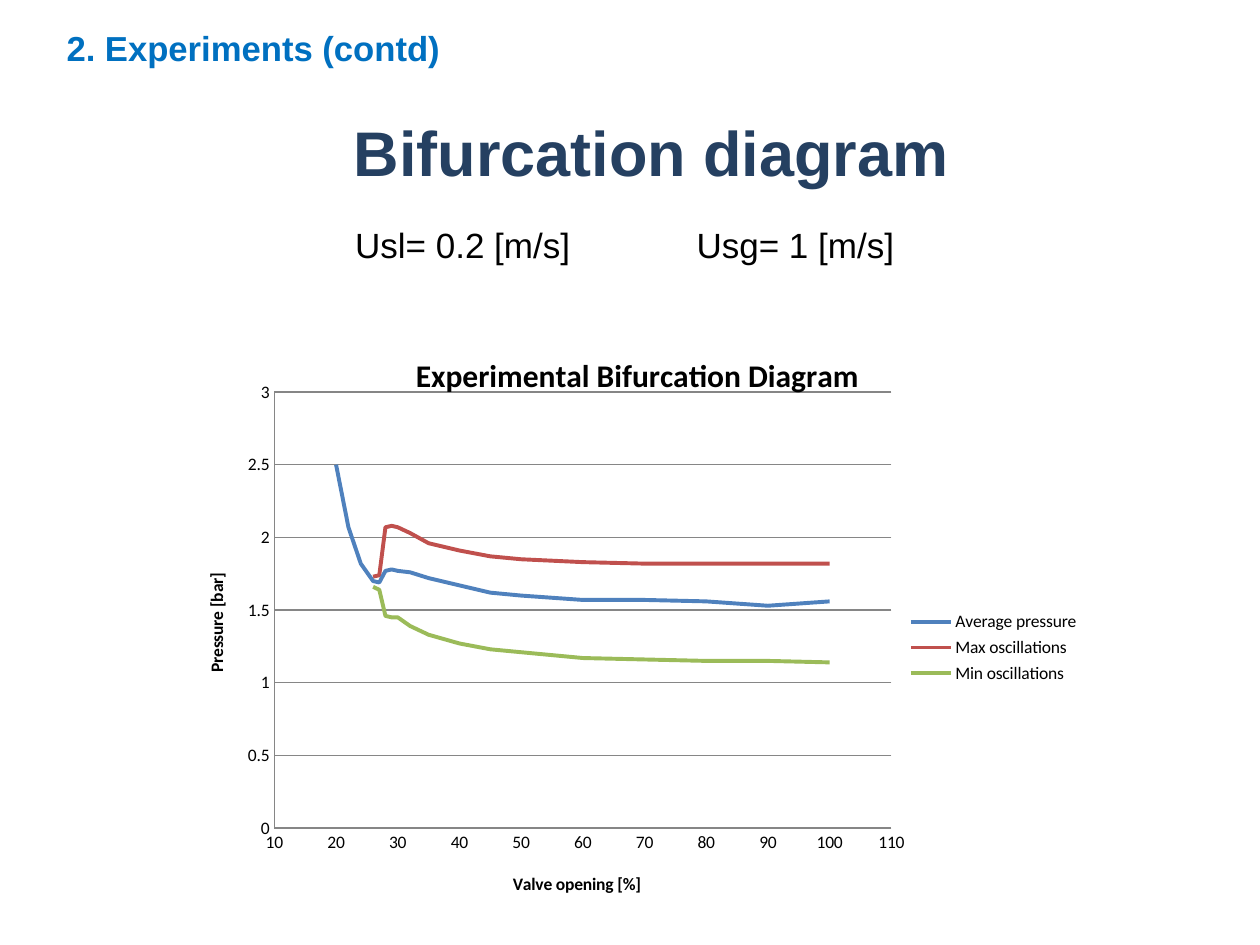
from typing import NamedTuple

from lxml.etree import SubElement
from pptx import Presentation
from pptx.chart.data import XyChartData
from pptx.dml.color import RGBColor
from pptx.enum.chart import XL_CHART_TYPE as Kind, XL_LEGEND_POSITION as Spot
from pptx.enum.chart import XL_TICK_MARK as Tick
from pptx.enum.text import MSO_ANCHOR as Anchor, PP_ALIGN as Align
from pptx.oxml.ns import qn
from pptx.util import Inches, Pt


class Curve(NamedTuple):
    name: str
    color: str
    xs: list[int]
    ys: list[float]


SWING = [26, 27, 28, 29, 30, 32, 35, 40, 45, 50, 60, 70, 80, 90, 100]
CURVES = [
    Curve("Average pressure", "4F81BD", [20, 22, 24] + SWING,
          [2.5, 2.07, 1.82, 1.7, 1.69, 1.77, 1.78, 1.77, 1.76, 1.72,
           1.67, 1.62, 1.6, 1.57, 1.57, 1.56, 1.53, 1.56]),
    Curve("Max oscillations", "C0504D", SWING,
          [1.73, 1.74, 2.07, 2.08, 2.07, 2.03, 1.96, 1.91,
           1.87, 1.85, 1.83, 1.82, 1.82, 1.82, 1.82]),
    Curve("Min oscillations", "9BBB59", SWING,
          [1.66, 1.64, 1.46, 1.45, 1.45, 1.39, 1.33, 1.27,
           1.23, 1.21, 1.17, 1.16, 1.15, 1.15, 1.14]),
]


def paint(obj, color: str) -> None:
    """Set the colour of a font or the solid fill of a line."""
    if hasattr(obj, "fill") and not hasattr(obj, "bold"):
        obj.fill.solid()
        obj = obj.fill.fore_color
    else:
        obj = obj.color
    obj.rgb = RGBColor.from_string(color)


def style(font, size: float, color: str = "000000", bold: bool = False,
          face: str = "Calibri") -> None:
    font.name, font.size, font.bold = face, Pt(size), bold
    paint(font, color)


def write(slide, text: str, left: float, top: float, width: float,
          height: float, size: float, color: str = "000000",
          bold: bool = False, align=Align.LEFT) -> None:
    box = slide.shapes.add_textbox(*map(Inches, (left, top, width, height)))
    frame = box.text_frame
    frame.word_wrap = True
    frame.vertical_anchor = Anchor.MIDDLE
    para = frame.paragraphs[0]
    para.alignment = align
    run = para.add_run()
    run.text = text
    style(run.font, size, color, bold, "Arial")


def place(elem, after: str | None, inner: bool = False, **spots: float) -> None:
    """Give a chart part a fixed place, as fractions of the chart."""
    for old in elem.findall(qn("c:layout")):
        elem.remove(old)
    node = SubElement(elem, qn("c:layout"))
    elem.insert(elem.index(elem.find(qn(after))) + 1 if after else 0, node)
    man = SubElement(node, qn("c:manualLayout"))
    if inner:
        SubElement(man, qn("c:layoutTarget"), val="inner")
    for key in ("x", "y"):
        SubElement(man, qn(f"c:{key}Mode"), val="edge")
    for key, val in spots.items():
        SubElement(man, qn(f"c:{key}"), val=str(val))


def label(title, text: str, size: float, x: float, y: float) -> None:
    frame = title.text_frame
    frame.text = text
    style(frame.paragraphs[0].runs[0].font, size, bold=True)
    place(title._element, "c:tx", x=x, y=y)


def scale(axis, low: float, high: float, step: float) -> None:
    axis.minimum_scale, axis.maximum_scale = low, high
    axis.major_unit = step
    axis.major_tick_mark = axis.minor_tick_mark = Tick.NONE
    axis.tick_labels.number_format = "General"
    axis.tick_labels.number_format_is_linked = False
    style(axis.tick_labels.font, 10)
    rule(axis.format.line)


def rule(line) -> None:
    paint(line, "868686")
    line.width = Pt(0.75)


def plot(slide) -> None:
    data = XyChartData()
    for curve in CURVES:
        row = data.add_series(curve.name)
        for x, y in zip(curve.xs, curve.ys):
            row.add_data_point(x, y)
    spot = map(Inches, (1.46, 2.57, 7.18, 4.76))
    chart = slide.shapes.add_chart(
        Kind.XY_SCATTER_SMOOTH_NO_MARKERS, *spot, data).chart
    style(chart.font, 10)
    chart.plots[0].vary_by_categories = False
    for row, curve in zip(chart.plots[0].series, CURVES):
        row.smooth = True
        paint(row.format.line, curve.color)
        row.format.line.width = Pt(2.25)

    across, up = chart.category_axis, chart.value_axis
    scale(across, 10, 110, 10)
    scale(up, 0, 3, 0.5)
    across.has_major_gridlines = False
    up.has_major_gridlines = True
    rule(up.major_gridlines.format.line)

    label(chart.chart_title, "Experimental Bifurcation Diagram", 18, 0.25, 0.04)
    label(across.axis_title, "Valve opening [%]", 10, 0.36, 0.91)
    label(up.axis_title, "Pressure [bar]", 10, 0.02, 0.41)
    for body in up.axis_title._element.iter(qn("a:bodyPr")):
        body.set("rot", "-5400000")
        body.set("vert", "horz")

    chart.has_legend = True
    chart.legend.position = Spot.RIGHT
    chart.legend.include_in_layout = False
    style(chart.legend.font, 10)
    place(chart.legend._element, "c:legendPos", x=0.8, y=0.47, w=0.19, h=0.14)
    area = chart.element.find(".//" + qn("c:plotArea"))
    place(area, None, inner=True, x=0.1, y=0.114, w=0.682, h=0.727)


def main() -> None:
    deck = Presentation()
    deck.slide_width, deck.slide_height = Inches(10), Inches(7.5)
    slide = deck.slides.add_slide(deck.slide_layouts[6])
    write(slide, "2. Experiments (contd)", 0.43, 0.13, 5, 0.5, 19.8,
          "0070C0", True)
    write(slide, "Bifurcation diagram", 2.17, 0.8, 6, 0.8, 36,
          "254061", True, Align.CENTER)
    for text, left in (("Usl= 0.2 [m/s]", 2.72), ("Usg= 1 [m/s]", 5.43)):
        write(slide, text, left, 1.69, 2.4, 0.5, 20)
    plot(slide)
    deck.save("out.pptx")


if __name__ == "__main__":
    main()
